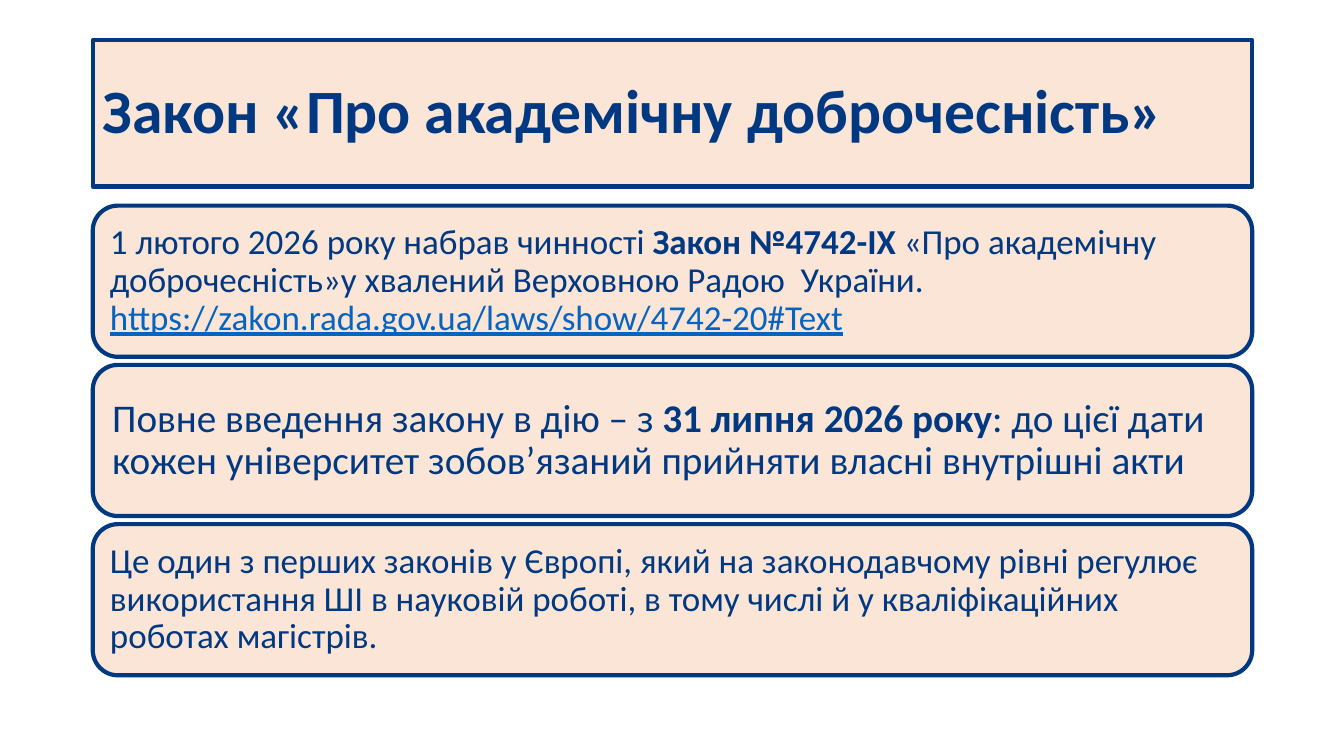
from pptx import Presentation
from pptx.dml.color import RGBColor
from pptx.enum import shapes, text
from pptx.util import Inches, Pt

NAVY = RGBColor(0x00, 0x39, 0x81)
PEACH = RGBColor(0xFB, 0xE5, 0xD6)
LINK_BLUE = RGBColor(0x05, 0x63, 0xC1)

LEFT, WIDTH = 0.92, 11.5
CARD_TOP, CARD_HEIGHT, CARD_GAP = 2.04, 1.5, 0.08

BOLD = {"bold": True}
LINK = {"underline": True, "color": LINK_BLUE}

# Each card: text size, inset, runs with their format
CARDS = [
    (25, 0.1, [
        ("1 лютого 2026 року набрав чинності ", {}),
        ("Закон №4742-IX ", BOLD),
        ("«Про академічну доброчесність»у хвалений Верховною Радою  України. ", {}),
        ("https://zakon.rada.gov.ua/laws/show/4742-20#Text", LINK),
    ]),
    (28, 0.12, [
        ("Повне введення закону в дію – з ", {}),
        ("31 липня 2026 року", BOLD),
        (": до цієї дати кожен університет зобов’язаний прийняти власні внутрішні акти", {}),
    ]),
    (25, 0.1, [
        ("Це один з перших законів у Європі, який на законодавчому рівні регулює "
         "використання ШІ в науковій роботі, в тому числі й у кваліфікаційних "
         "роботах магістрів.", {}),
    ]),
]


class LawSlide:
    def __init__(self, presentation):
        self.slide = presentation.slides.add_slide(presentation.slide_layouts[5])
        self.font = {"name": "Calibri", "bold": False, "color": NAVY}

    def format_box(self, shape):
        shape.fill.solid()
        shape.fill.fore_color.rgb = PEACH
        shape.line.color.rgb = NAVY
        shape.line.width = Pt(3)

    def add_text(self, shape, size, inset, runs):
        frame = shape.text_frame
        frame_format = {
            "word_wrap": True,
            "auto_size": text.MSO_AUTO_SIZE.NONE,
            "vertical_anchor": text.MSO_ANCHOR.MIDDLE,
        }
        for side in ("left", "top", "right", "bottom"):
            frame_format["margin_" + side] = Inches(inset)
        for name, value in frame_format.items():
            setattr(frame, name, value)
        paragraph = frame.paragraphs[0]
        paragraph.alignment = text.PP_ALIGN.LEFT
        paragraph.line_spacing = 0.9
        for words, changes in runs:
            run = paragraph.add_run()
            run.text = words
            for name, value in {**self.font, "size": Pt(size), **changes}.items():
                if name == "color":
                    run.font.color.rgb = value
                else:
                    setattr(run.font, name, value)

    def title(self, words):
        title = self.slide.shapes.title
        place = {"left": LEFT, "top": 0.4, "width": WIDTH, "height": 1.45}
        for name, value in place.items():
            setattr(title, name, Inches(value))
        self.format_box(title)
        self.add_text(title, 44, 0.1, [(words, BOLD)])

    def card(self, top, size, inset, runs):
        card = self.slide.shapes.add_shape(
            shapes.MSO_SHAPE.ROUNDED_RECTANGLE,
            Inches(LEFT), Inches(top), Inches(WIDTH), Inches(CARD_HEIGHT))
        card.shadow.inherit = False
        self.format_box(card)
        self.add_text(card, size, inset, runs)


def main():
    presentation = Presentation()
    presentation.slide_width = Inches(13.33)
    presentation.slide_height = Inches(7.5)
    law = LawSlide(presentation)
    law.title("Закон «Про академічну доброчесність»")
    for index, (size, inset, runs) in enumerate(CARDS):
        law.card(CARD_TOP + index * (CARD_HEIGHT + CARD_GAP), size, inset, runs)
    presentation.save("out.pptx")


if __name__ == "__main__":
    main()
